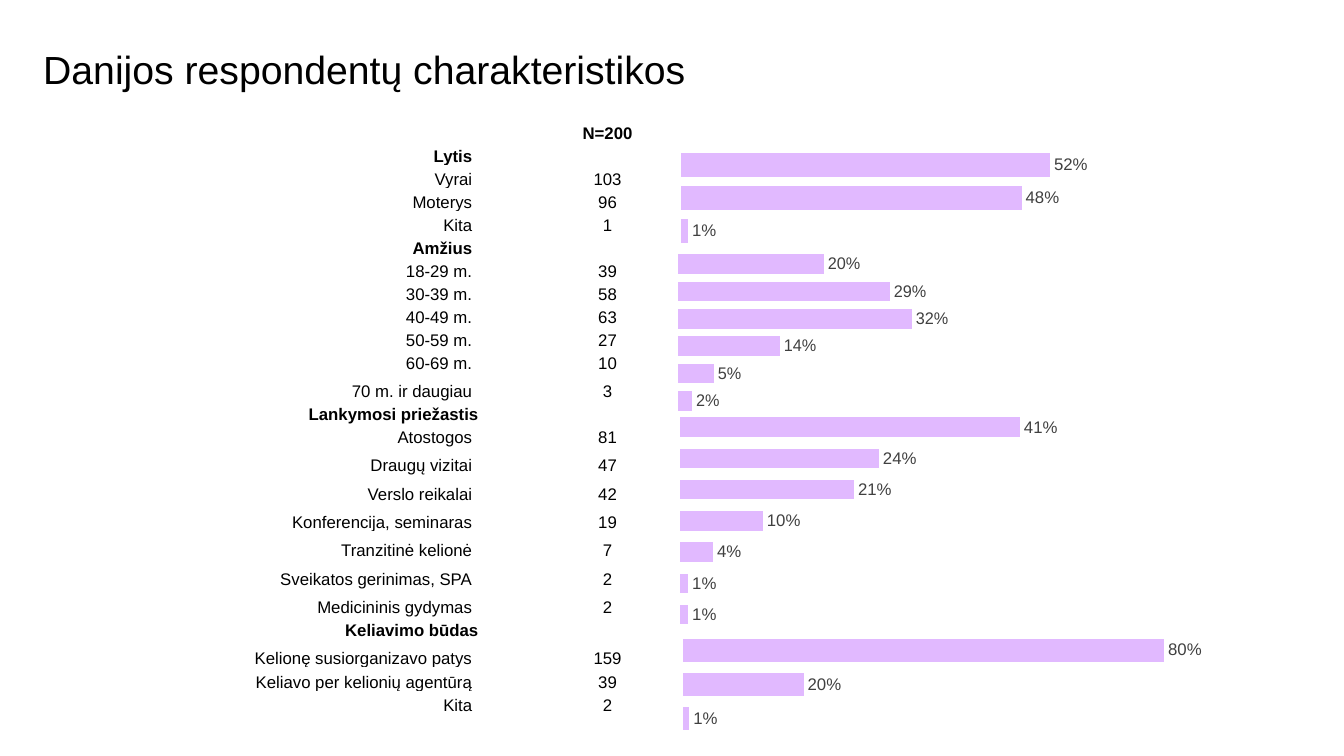
from lxml import etree
from pptx import Presentation
from pptx.chart.data import CategoryChartData
from pptx.dml.color import RGBColor
from pptx.enum.chart import XL_CHART_TYPE, XL_LABEL_POSITION
from pptx.enum.text import MSO_ANCHOR, PP_ALIGN
from pptx.oxml import parse_xml
from pptx.oxml.ns import nsdecls, qn
from pptx.util import Cm, Pt

BAR = XL_CHART_TYPE.BAR_CLUSTERED
OUTSIDE_END = XL_LABEL_POSITION.OUTSIDE_END
BOTTOM, MIDDLE = MSO_ANCHOR.BOTTOM, MSO_ANCHOR.MIDDLE
LEFT, CENTER, RIGHT = PP_ALIGN.LEFT, PP_ALIGN.CENTER, PP_ALIGN.RIGHT

FONT = "Arial"
COLORS = {"text": "000000", "bar": "E1B9FF", "label": "404040"}

COLUMN_WIDTHS = (5.61, 6.6)
ROW_HEIGHT = 0.58
TALL_ROWS = {11: 0.71, 14: 0.71, 15: 0.71, 16: 0.71, 17: 0.71,
             18: 0.74, 19: 0.71, 21: 0.69, 22: 0.61}
CELL_MARGIN = 0.03

# Heading, whether it spans both columns, and rows of label, count and share
GROUPS = [
    ("Lytis", False, [
        ("Vyrai", 103, 0.52), ("Moterys", 96, 0.48), ("Kita", 1, 0.01)]),
    ("Amžius", False, [
        ("18-29 m.", 39, 0.2), ("30-39 m.", 58, 0.29), ("40-49 m.", 63, 0.32),
        ("50-59 m.", 27, 0.14), ("60-69 m.", 10, 0.05),
        ("70 m. ir daugiau", 3, 0.02)]),
    ("Lankymosi priežastis", True, [
        ("Atostogos", 81, 0.41), ("Draugų vizitai", 47, 0.24),
        ("Verslo reikalai", 42, 0.21), ("Konferencija, seminaras", 19, 0.1),
        ("Tranzitinė kelionė", 7, 0.04), ("Sveikatos gerinimas, SPA", 2, 0.01),
        ("Medicininis gydymas", 2, 0.01)]),
    ("Keliavimo būdas", True, [
        ("Kelionę susiorganizavo patys", 159, 0.8),
        ("Keliavo per kelionių agentūrą", 39, 0.2), ("Kita", 2, 0.01)]),
]

# Top, width and height in cm, gap width, axis maximum
CHART_FRAMES = [
    (3.68, 11.18, 2.62, 40, 0.6),
    (6.22, 6.96, 4.32, 40, 0.35),
    (10.26, 9.8, 5.74, 60, 0.45),
    (15.9, 14.2, 2.69, 50, 0.9),
]
CHART_LEFT = 16.94
PLOT_BOX = {"x": 0.02, "y": 0.02, "w": 0.96, "h": 0.96}


def style_font(font, size, color, bold=False):
    font.name = FONT
    font.size = Pt(size)
    font.bold = bold
    font.color.rgb = RGBColor.from_string(COLORS[color])


def write_text(text_frame, text, size=12, color="text", bold=False, align=LEFT):
    paragraph = text_frame.paragraphs[0]
    paragraph.alignment = align
    run = paragraph.add_run()
    run.text = text
    style_font(run.font, size, color, bold)


def add_title(slide, text):
    box = slide.shapes.add_textbox(Cm(1.09), Cm(1.02), Cm(28.17), Cm(1.45))
    frame = box.text_frame
    frame.word_wrap = True
    frame.vertical_anchor = MIDDLE
    frame.margin_left = frame.margin_right = 0
    frame.margin_top = frame.margin_bottom = 0
    write_text(frame, text, size=28)


def fill_cell(cell, text, bold, align):
    cell.fill.background()
    cell.vertical_anchor = BOTTOM
    cell.margin_left = cell.margin_right = cell.margin_top = Cm(CELL_MARGIN)
    cell.margin_bottom = 0
    if text:
        write_text(cell.text_frame, text, bold=bold, align=align)
    else:
        # An empty cell needs a small font so that its row stays low
        paragraph = cell.text_frame.paragraphs[0]
        etree.SubElement(paragraph._p, qn("a:endParaRPr"), sz="1200")


def table_rows():
    """Return label, count, bold and spanning flag for every table row."""
    rows = [("", "N=200", True, False)]
    for heading, spans, entries in GROUPS:
        rows.append((heading, "", True, spans))
        rows += [(label, str(count), False, False) for label, count, _ in entries]
    return rows


def add_respondent_table(slide):
    rows = table_rows()
    heights = [TALL_ROWS.get(index, ROW_HEIGHT) for index in range(len(rows))]
    frame = slide.shapes.add_table(len(rows), len(COLUMN_WIDTHS), Cm(6.32), Cm(3.02),
                                   Cm(sum(COLUMN_WIDTHS)), Cm(sum(heights)))
    table = frame.table
    table.first_row = table.horz_banding = False
    for column, width in zip(table.columns, COLUMN_WIDTHS):
        column.width = Cm(width)
    for index, (label, count, bold, spans) in enumerate(rows):
        table.rows[index].height = Cm(heights[index])
        label_cell, count_cell = table.cell(index, 0), table.cell(index, 1)
        fill_cell(label_cell, label, bold, RIGHT)
        fill_cell(count_cell, count, bold, CENTER)
        if spans:
            label_cell.merge(count_cell)
            label_cell.margin_right = Cm(COLUMN_WIDTHS[1] + CELL_MARGIN)


def fix_plot_box(chart):
    """Give the inner plot area a fixed place within the chart."""
    plot_area = chart._chartSpace.chart.plotArea
    for layout in plot_area.findall(qn("c:layout")):
        plot_area.remove(layout)
    sizes = "".join(f'<c:{key} val="{value}"/>' for key, value in PLOT_BOX.items())
    plot_area.insert(0, parse_xml(
        f'<c:layout {nsdecls("c")}><c:manualLayout><c:layoutTarget val="inner"/>'
        f'<c:xMode val="edge"/><c:yMode val="edge"/>{sizes}'
        '</c:manualLayout></c:layout>'))


def add_share_chart(slide, shares, top, width, height, gap, maximum):
    data = CategoryChartData(number_format="0%")
    data.categories = [str(number) for number in range(1, len(shares) + 1)]
    data.add_series("Series 1", shares[::-1])
    chart = slide.shapes.add_chart(BAR, Cm(CHART_LEFT), Cm(top), Cm(width),
                                   Cm(height), data).chart
    chart.has_legend = chart.has_title = False
    style_font(chart.font, 10, "text")
    chart.category_axis.visible = False
    value_axis = chart.value_axis
    value_axis.visible = value_axis.has_major_gridlines = False
    value_axis.minimum_scale, value_axis.maximum_scale = 0, maximum

    plot = chart.plots[0]
    plot.gap_width = gap
    plot.vary_by_categories = False
    series = plot.series[0]
    series.format.fill.solid()
    series.format.fill.fore_color.rgb = RGBColor.from_string(COLORS["bar"])
    labels = series.data_labels
    labels.show_value = True
    labels.number_format = "0%"
    labels.number_format_is_linked = False
    labels.position = OUTSIDE_END
    style_font(labels.font, 12, "label")
    fix_plot_box(chart)


def main():
    presentation = Presentation()
    presentation.slide_width, presentation.slide_height = Cm(33.87), Cm(19.05)
    slide = presentation.slides.add_slide(presentation.slide_layouts[6])
    add_title(slide, "Danijos respondentų charakteristikos")
    add_respondent_table(slide)
    for (_, _, entries), chart_frame in zip(GROUPS, CHART_FRAMES):
        add_share_chart(slide, [share for _, _, share in entries], *chart_frame)
    presentation.save("out.pptx")


if __name__ == "__main__":
    main()
